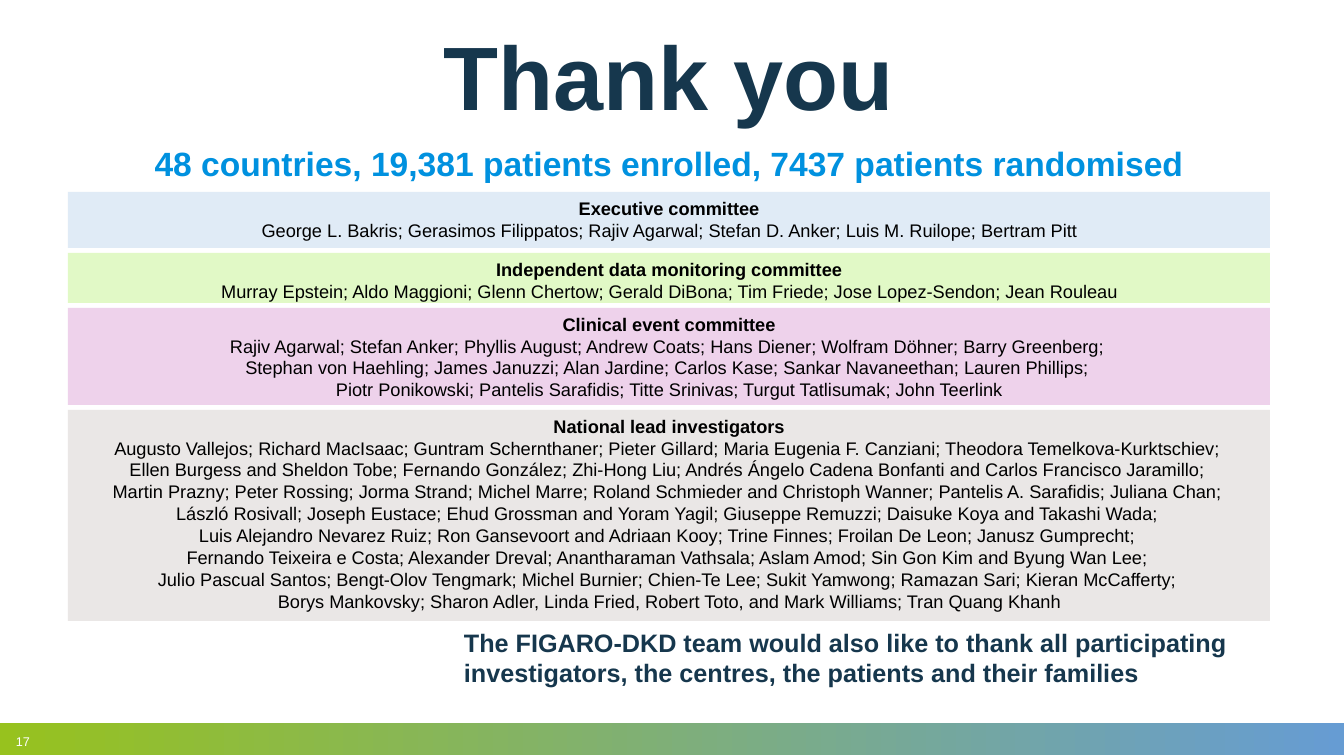
"""Build the closing thank-you slide with its committee panels."""
import copy

import pptx
import pptx.dml.color
import pptx.enum.shapes
import pptx.enum.text
import pptx.oxml.ns
import pptx.util

ALIGN = pptx.enum.text.PP_ALIGN
ANCHOR = pptx.enum.text.MSO_ANCHOR
RECTANGLE = pptx.enum.shapes.MSO_SHAPE.RECTANGLE

COLOURS = {
    "navy": "16374D", "sky": "0091DF", "black": "000000", "white": "FFFFFF",
    "bar_green": "97C21E", "bar_blue": "669CD3",
    "executive": "E0EBF6", "monitoring": "E1F9C6",
    "clinical": "EED2EB", "national": "EAE7E6",
}

COMMITTEES = [
    ("Executive committee", "executive", 56, 10,
     ["George L. Bakris; Gerasimos Filippatos; Rajiv Agarwal; Stefan D. Anker; Luis M. Ruilope; Bertram Pitt"]),
    ("Independent data monitoring committee", "monitoring", 50, 10,
     ["Murray Epstein; Aldo Maggioni; Glenn Chertow; Gerald DiBona; Tim Friede; Jose Lopez-Sendon; Jean Rouleau"]),
    ("Clinical event committee", "clinical", 97, 10,
     ["Rajiv Agarwal; Stefan Anker; Phyllis August; Andrew Coats; Hans Diener; Wolfram Döhner; Barry Greenberg;",
      "Stephan von Haehling; James Januzzi; Alan Jardine; Carlos Kase; Sankar Navaneethan; Lauren Phillips;",
      "Piotr Ponikowski; Pantelis Sarafidis; Titte Srinivas; Turgut Tatlisumak; John Teerlink"]),
    ("National lead investigators", "national", 211, 39,
     ["Augusto Vallejos; Richard MacIsaac; Guntram Schernthaner; Pieter Gillard; Maria Eugenia F. Canziani; Theodora Temelkova‑Kurktschiev;",
      "Ellen Burgess and Sheldon Tobe; Fernando González; Zhi-Hong Liu; Andrés Ángelo Cadena Bonfanti and Carlos Francisco Jaramillo;",
      "Martin Prazny; Peter Rossing; Jorma Strand; Michel Marre; Roland Schmieder and Christoph Wanner; Pantelis A. Sarafidis; Juliana Chan;",
      "László Rosivall; Joseph Eustace; Ehud Grossman and Yoram Yagil; Giuseppe Remuzzi; Daisuke Koya and Takashi Wada;",
      "Luis Alejandro Nevarez Ruiz; Ron Gansevoort and Adriaan Kooy; Trine Finnes; Froilan De Leon; Janusz Gumprecht;",
      "Fernando Teixeira e Costa; Alexander Dreval; Anantharaman Vathsala; Aslam Amod; Sin Gon Kim and Byung Wan Lee;",
      "Julio Pascual Santos; Bengt-Olov Tengmark; Michel Burnier; Chien-Te Lee; Sukit Yamwong; Ramazan Sari; Kieran McCafferty;",
      "Borys Mankovsky; Sharon Adler, Linda Fried, Robert Toto, and Mark Williams; Tran Quang Khanh"]),
]


def px(length):
    return pptx.util.Emu(round(length * 914400 / 100.8))


def rgb(name):
    return pptx.dml.color.RGBColor.from_string(COLOURS[name])


def write(paragraph, text, *, size, colour, font, bold=False, align=ALIGN.LEFT, spacing=None):
    paragraph.text = text
    paragraph.alignment = align
    if spacing:
        paragraph.line_spacing = spacing
    for run in paragraph.runs:
        run.font.name = font
        run.font.size = pptx.util.Pt(size)
        run.font.bold = bold
        run.font.color.rgb = rgb(colour)
    run_format = paragraph.runs[0].font._element
    for line_break in paragraph._p.findall(pptx.oxml.ns.qn("a:br")):
        line_break.append(copy.deepcopy(run_format))


class SlideBuilder:
    """Holds the style and the current slide."""

    font = "Arial"

    def __init__(self, slide):
        self.slide = slide

    def rectangle(self, left, top, width, height):
        shape = self.slide.shapes.add_shape(RECTANGLE, *map(px, (left, top, width, height)))
        shape.shadow.inherit = False
        shape.line.fill.background()
        return shape

    def gradient_bar(self, left, top, width, height, colours):
        bar = self.rectangle(left, top, width, height)
        bar.fill.gradient()
        bar.fill.gradient_angle = 0
        for stop, colour in zip(bar.fill.gradient_stops, colours):
            stop.color.rgb = rgb(colour)

    def frame(self, shape, anchor, inset_left=10, inset_right=10):
        frame = shape.text_frame
        frame.word_wrap = True
        frame.vertical_anchor = anchor
        frame.margin_left, frame.margin_right = px(inset_left), px(inset_right)
        frame.margin_top = frame.margin_bottom = px(5)
        return frame

    def label(self, left, top, width, height, text, anchor=ANCHOR.TOP, inset_left=10, **style):
        box = self.slide.shapes.add_textbox(*map(px, (left, top, width, height)))
        frame = self.frame(box, anchor, inset_left)
        write(frame.paragraphs[0], text, font=self.font, **style)

    def panel(self, left, top, width, height, heading, members, colour, inset):
        panel = self.rectangle(left, top, width, height)
        panel.fill.solid()
        panel.fill.fore_color.rgb = rgb(colour)
        frame = self.frame(panel, ANCHOR.TOP, inset, inset)
        style = dict(size=13, colour="black", font=self.font, align=ALIGN.CENTER)
        write(frame.paragraphs[0], heading, bold=True, **style)
        write(frame.add_paragraph(), " \v".join(members), **style)


def main():
    presentation = pptx.Presentation()
    presentation.slide_width, presentation.slide_height = px(1344), px(756)
    builder = SlideBuilder(presentation.slides.add_slide(presentation.slide_layouts[6]))

    builder.gradient_bar(0, 723, 1344, 32, ("bar_green", "bar_blue"))
    builder.label(16, 729, 41, 25, "17", anchor=ANCHOR.BOTTOM, inset_left=0, size=9, colour="white")
    builder.label(67, 140, 1204, 51, "48 countries, 19,381 patients enrolled, 7437 patients randomised",
                  anchor=ANCHOR.MIDDLE, size=24, colour="sky", bold=True, align=ALIGN.CENTER, spacing=0.9)
    builder.label(454, 622, 816, 79,
                  "The FIGARO-DKD team would also like to thank all participating investigators, "
                  "the centres, the patients and their families",
                  size=18, colour="navy", bold=True)
    builder.label(68, 36, 1202, 106, "Thank you", size=64.3, colour="navy", bold=True,
                  align=ALIGN.CENTER, spacing=0.8)

    panel_top, panel_gap = 192, 5
    for heading, colour, height, inset, members in COMMITTEES:
        builder.panel(68, panel_top, 1202, height, heading, members, colour, inset)
        panel_top += height + panel_gap

    presentation.save("out.pptx")


if __name__ == "__main__":
    main()
